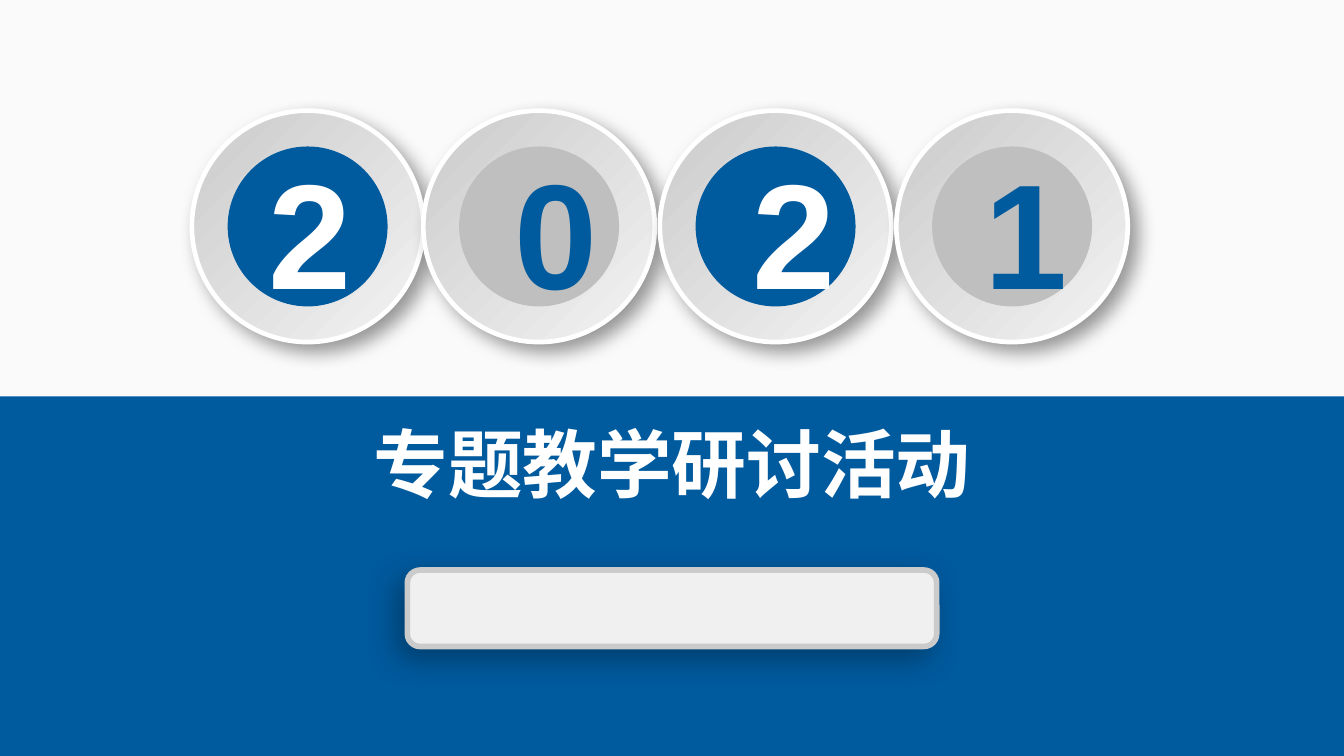
from dataclasses import dataclass

from lxml import etree
from pptx import Presentation
from pptx.dml.color import RGBColor
from pptx.enum.shapes import MSO_SHAPE
from pptx.enum.text import MSO_AUTO_SIZE, PP_ALIGN
from pptx.oxml.ns import qn
from pptx.util import Pt

RECTANGLE, ROUNDED, OVAL = MSO_SHAPE.RECTANGLE, MSO_SHAPE.ROUNDED_RECTANGLE, MSO_SHAPE.OVAL
FIT_TEXT = MSO_AUTO_SIZE.SHAPE_TO_FIT_TEXT
CENTER = PP_ALIGN.CENTER


@dataclass(frozen=True)
class Theme:
    font: str = "Arial"
    title_size: float = 40
    digit_size: float = 80
    blue: str = "005A9E"
    gray: str = "BFBFBF"
    white: str = "FFFFFF"
    shadow: str = "000000"
    pill_line: str = "CBCBCB"
    backdrop: tuple[str, str] = ("FAFAFA", "FCFCFC")
    ring: tuple[str, str] = ("CBCBCB", "F3F3F3")
    pill: tuple[str, str] = ("F0F0F0", "F1F1F1")


@dataclass(frozen=True)
class Box:
    left: float
    top: float
    width: float
    height: float

    def lengths(self):
        return Pt(self.left), Pt(self.top), Pt(self.width), Pt(self.height)


@dataclass(frozen=True)
class Shadow:
    opacity: int
    blur: float
    distance: float
    angle: int


@dataclass(frozen=True)
class YearDigit:
    text: str
    ring_left: float
    text_left: float
    text_width: float
    disc_color: str
    text_color: str


THEME = Theme()
SLIDE_WIDTH, SLIDE_HEIGHT = 720, 405
BAND_TOP = 212.4
RING_TOP, RING_SIZE, DISC_SIZE = 59.3, 124, 85.7
DIGIT_TOP, DIGIT_HEIGHT = 71.8, 104.4
RING_SHADOW = Shadow(40, 10, 6, 45)
PILL_SHADOW = Shadow(30, 16, 7, 135)
YEAR = [
    YearDigit("2", 102.8, 136.8, 57.6, THEME.blue, THEME.white),
    YearDigit("0", 226.8, 268.6, 41, THEME.gray, THEME.blue),
    YearDigit("2", 353.5, 396, 41, THEME.blue, THEME.white),
    YearDigit("1", 480.2, 520.6, 41, THEME.gray, THEME.blue),
]


def fill_gradient(fill, colors: tuple[str, str], angle: float) -> None:
    """Fill with two colours; the angle runs counter-clockwise."""
    fill.gradient()
    fill.gradient_angle = angle
    for stop, color, position in zip(fill.gradient_stops, colors, (0, 1)):
        stop.color.rgb = RGBColor.from_string(color)
        stop.position = position


def add_filled(shapes, kind, box: Box, fill: str | tuple[str, str]):
    """Add an unlined shape; a pair of colours gives a diagonal gradient."""
    shape = shapes.add_shape(kind, *box.lengths())
    shape.shadow.inherit = False
    shape.line.fill.background()
    if isinstance(fill, str):
        shape.fill.solid()
        shape.fill.fore_color.rgb = RGBColor.from_string(fill)
    else:
        fill_gradient(shape.fill, fill, 315)
    return shape


def add_raised(shapes, kind, box: Box, fill: tuple[str, str], line: str,
               line_width: float, shadow: Shadow) -> None:
    """Add a gradient shape with an outline and an outer shadow."""
    shape = add_filled(shapes, kind, box, fill)
    shape.line.color.rgb = RGBColor.from_string(line)
    shape.line.width = Pt(line_width)
    effects = shape._element.spPr.find(qn("a:effectLst"))
    outer = etree.SubElement(
        effects, qn("a:outerShdw"), blurRad=str(Pt(shadow.blur)),
        dist=str(Pt(shadow.distance)), dir=str(shadow.angle * 60000),
        algn="ctr", rotWithShape="0")
    color = etree.SubElement(outer, qn("a:srgbClr"), val=THEME.shadow)
    etree.SubElement(color, qn("a:alpha"), val=str(shadow.opacity * 1000))


def add_bold_text(shapes, box: Box, text: str, size: float, color: str) -> None:
    frame = shapes.add_textbox(*box.lengths()).text_frame
    frame.word_wrap = True
    frame.auto_size = FIT_TEXT
    frame.text = text
    paragraph = frame.paragraphs[0]
    paragraph.alignment = CENTER
    font = paragraph.runs[0].font
    font.name = THEME.font
    font.size = Pt(size)
    font.bold = True
    font.color.rgb = RGBColor.from_string(color)


def add_year_digit(slide, digit: YearDigit) -> None:
    shapes = slide.shapes.add_group_shape().shapes
    inset = (RING_SIZE - DISC_SIZE) / 2
    ring = Box(digit.ring_left, RING_TOP, RING_SIZE, RING_SIZE)
    disc = Box(ring.left + inset, ring.top + inset, DISC_SIZE, DISC_SIZE)
    add_raised(shapes, OVAL, ring, THEME.ring, THEME.white, 2.5, RING_SHADOW)
    add_filled(shapes, OVAL, disc, digit.disc_color)
    add_bold_text(shapes, Box(digit.text_left, DIGIT_TOP, digit.text_width, DIGIT_HEIGHT),
                  digit.text, THEME.digit_size, digit.text_color)


def main() -> None:
    presentation = Presentation()
    presentation.slide_width = Pt(SLIDE_WIDTH)
    presentation.slide_height = Pt(SLIDE_HEIGHT)
    slide = presentation.slides.add_slide(presentation.slide_layouts[6])
    fill_gradient(slide.background.fill, THEME.backdrop, 270)

    band = Box(0, BAND_TOP, SLIDE_WIDTH, SLIDE_HEIGHT - BAND_TOP)
    add_filled(slide.shapes, RECTANGLE, band, THEME.blue)
    add_bold_text(slide.shapes, Box(0, 220.3, SLIDE_WIDTH, 55.7),
                  "专题教学研讨活动", THEME.title_size, THEME.white)
    add_raised(slide.shapes, ROUNDED, Box(218.2, 305.4, 283.6, 41),
               THEME.pill, THEME.pill_line, 3, PILL_SHADOW)
    for digit in YEAR:
        add_year_digit(slide, digit)
    presentation.save("out.pptx")


if __name__ == "__main__":
    main()
